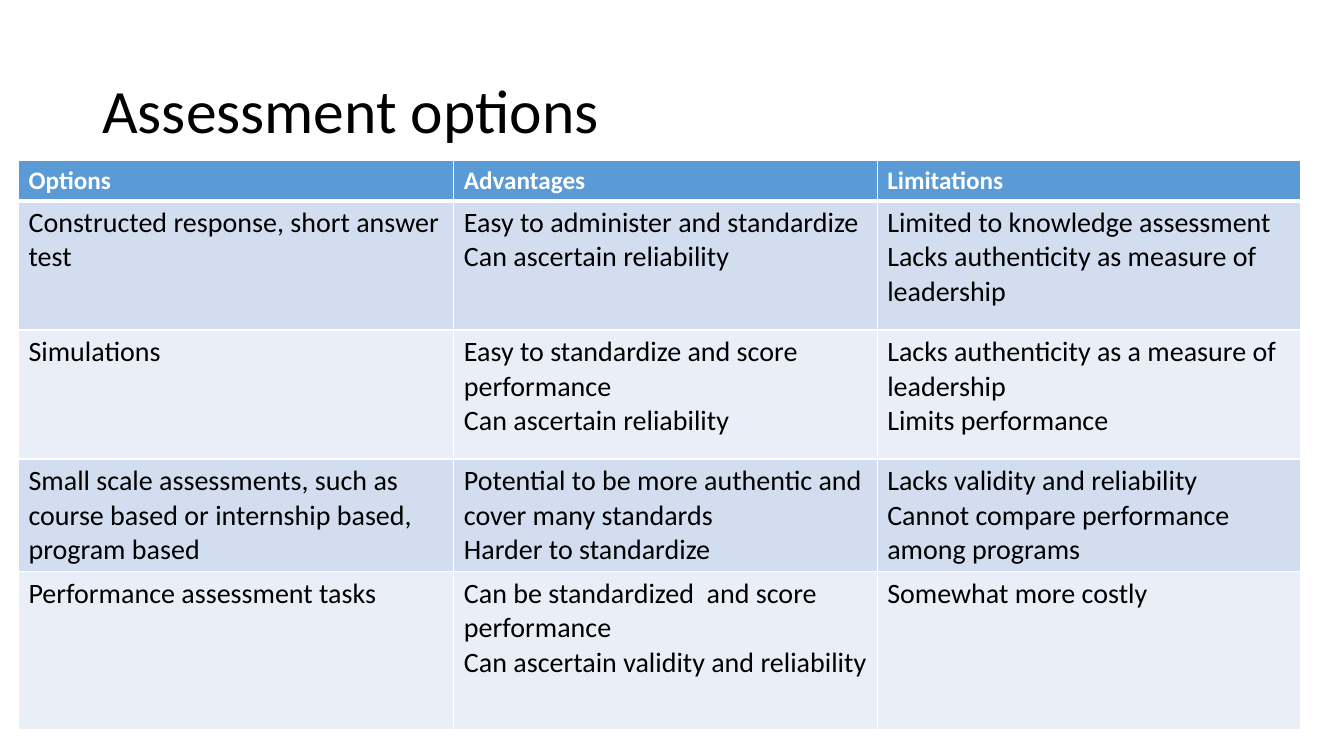
from lxml.etree import SubElement
from pptx import Presentation
from pptx.dml.color import RGBColor
from pptx.enum.text import MSO_ANCHOR
from pptx.oxml.ns import qn
from pptx.util import Pt

COLORS = {
    "ink": "000000",
    "white": "FFFFFF",
    "head": "5B9BD5",
    "odd": "D2DEEF",
    "even": "EAEFF7",
}
TITLE = {"name": "Calibri", "size": Pt(44), "bold": False}
HEAD = {"name": "Calibri", "size": Pt(18), "bold": True}
BODY = {"name": "Calibri", "size": Pt(20), "bold": False}

COLS = [311, 302.4, 302.4]
HEIGHTS = [28.8, 92.2, 92.2, 80.6, 113]
ROWS = [
    ["Options", "Advantages", "Limitations"],
    [
        "Constructed response, short answer test",
        "Easy to administer and standardize\nCan ascertain reliability",
        "Limited to knowledge assessment\n"
        "Lacks authenticity as measure of leadership",
    ],
    [
        "Simulations",
        "Easy to standardize and score performance\nCan ascertain reliability",
        "Lacks authenticity as a measure of leadership\nLimits performance",
    ],
    [
        "Small scale assessments, such as course based or internship based, "
        "program based",
        "Potential to be more authentic and cover many standards\n"
        "Harder to standardize",
        "Lacks validity and reliability\n"
        "Cannot compare performance among programs",
    ],
    [
        "Performance assessment tasks",
        "Can be standardized  and score performance\n"
        "Can ascertain validity and reliability",
        "Somewhat more costly",
    ],
]


def color(name):
    return RGBColor.from_string(COLORS[name])


def write(frame, text, style, ink):
    frame.text = text
    for para in frame.paragraphs:
        for run in para.runs:
            for key, value in style.items():
                setattr(run.font, key, value)
            run.font.color.rgb = color(ink)


def add_title(slide, text):
    box = slide.shapes.add_textbox(Pt(66), Pt(28.8), Pt(828), Pt(104.4))
    frame = box.text_frame
    frame.word_wrap = True
    frame.vertical_anchor = MSO_ANCHOR.MIDDLE
    write(frame, text, TITLE, "ink")
    frame.paragraphs[0].line_spacing = 0.9


def add_edges(cell, top, bottom):
    """Draw white cell borders; call before the fill is set."""
    props = cell._tc.get_or_add_tcPr()
    for side, width in {"L": 1, "R": 1, "T": top, "B": bottom}.items():
        line = SubElement(props, qn(f"a:ln{side}"), w=str(Pt(width)))
        fill = SubElement(line, qn("a:solidFill"))
        SubElement(fill, qn("a:srgbClr"), val=COLORS["white"])


def add_grid(slide):
    frame = slide.shapes.add_table(
        len(ROWS), len(COLS), Pt(13.2), Pt(114.7), Pt(sum(COLS)), Pt(sum(HEIGHTS))
    )
    table = frame.table
    for col, width in zip(table.columns, COLS):
        col.width = Pt(width)
    for row, height in zip(table.rows, HEIGHTS):
        row.height = Pt(height)
    for i, texts in enumerate(ROWS):
        style, ink = (BODY, "ink") if i else (HEAD, "white")
        band = ("odd" if i % 2 else "even") if i else "head"
        for j, text in enumerate(texts):
            cell = table.cell(i, j)
            add_edges(cell, 3 if i == 1 else 1, 3 if i == 0 else 1)
            cell.fill.solid()
            cell.fill.fore_color.rgb = color(band)
            write(cell.text_frame, text, style, ink)


def main():
    deck = Presentation()
    deck.slide_width, deck.slide_height = Pt(960), Pt(540)
    slide = deck.slides.add_slide(deck.slide_layouts[6])
    add_title(slide, "Assessment options")
    add_grid(slide)
    deck.save("out.pptx")


if __name__ == "__main__":
    main()
